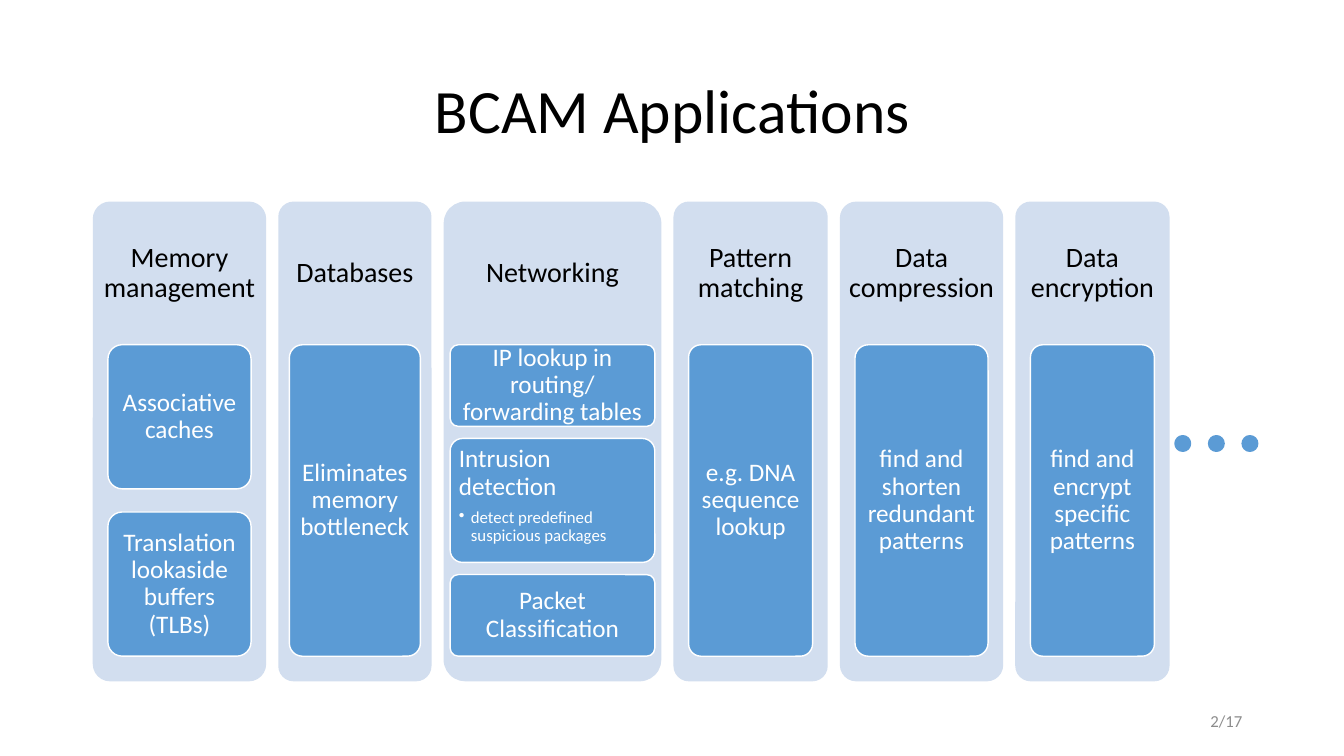
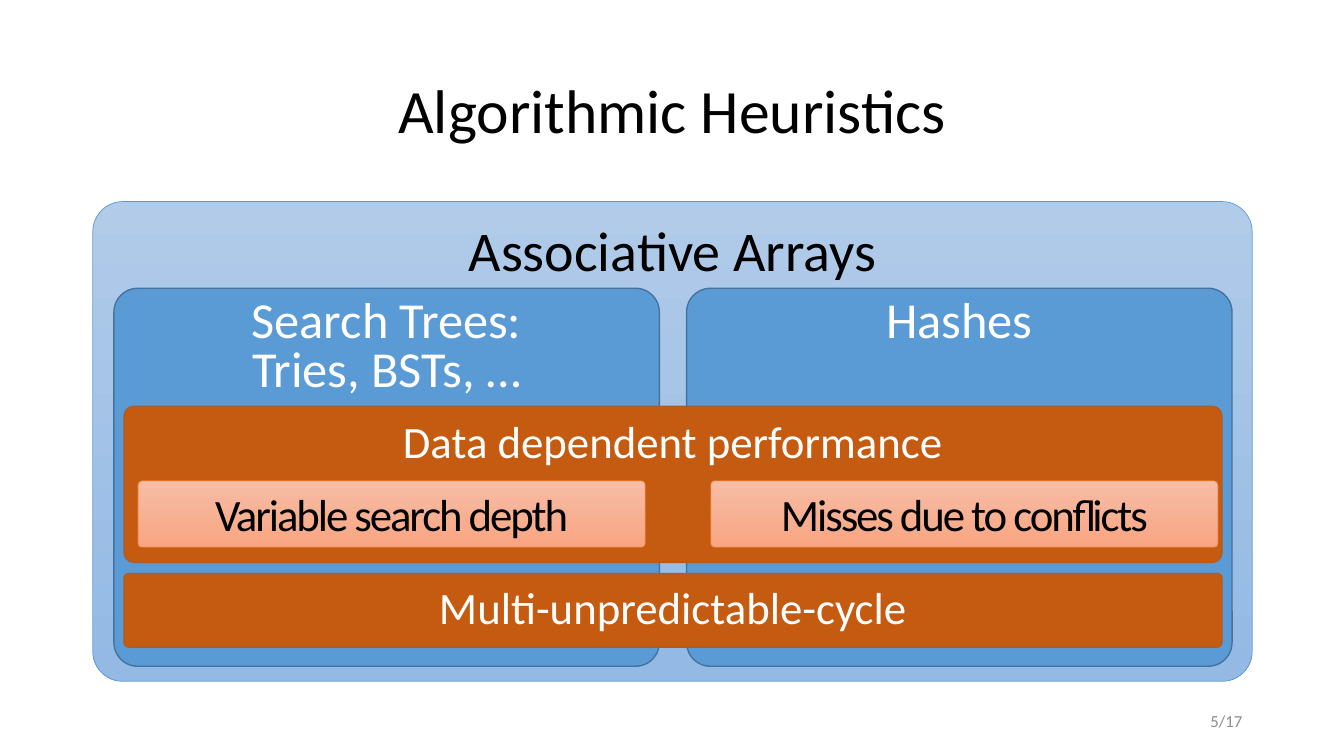
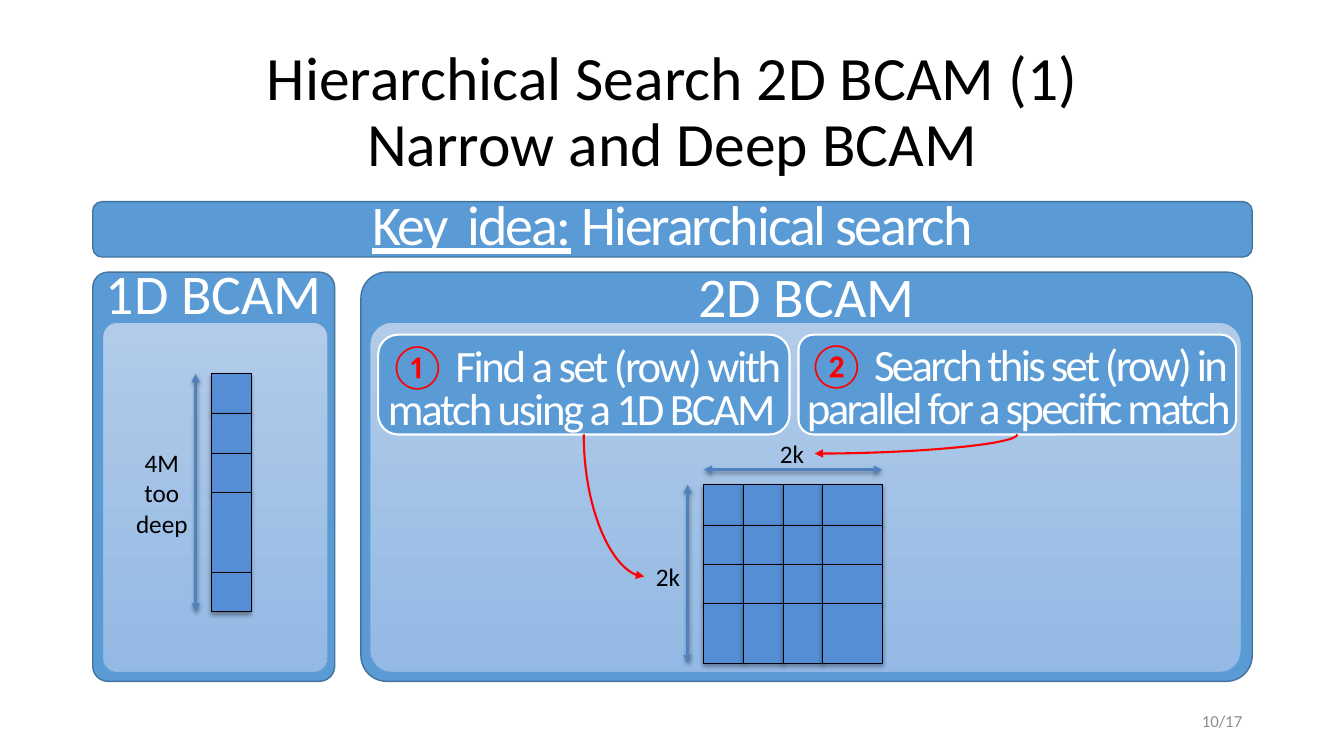
from lxml import etree
from pptx import Presentation
from pptx.dml.color import RGBColor
from pptx.enum.dml import MSO_LINE
from pptx.enum.shapes import MSO_CONNECTOR, MSO_SHAPE
from pptx.enum.text import MSO_ANCHOR, PP_ALIGN
from pptx.oxml.ns import qn
from pptx.util import Pt

ROUNDED, RECTANGLE = MSO_SHAPE.ROUNDED_RECTANGLE, MSO_SHAPE.RECTANGLE
STRAIGHT, CURVE = MSO_CONNECTOR.STRAIGHT, MSO_CONNECTOR.CURVE
LEFT, CENTER, RIGHT = PP_ALIGN.LEFT, PP_ALIGN.CENTER, PP_ALIGN.RIGHT
TOP, MIDDLE = MSO_ANCHOR.TOP, MSO_ANCHOR.MIDDLE
ROUND_DOT = MSO_LINE.ROUND_DOT

EMU_PER_PX = 9144  # 100 px to the inch
FONT = "Calibri"
BLACK, WHITE, GREY, RED = "000000", "FFFFFF", "8C8C8C", "FF0000"
BLUE, BLUE_EDGE, PALE_BLUE = "5B9BD5", "43739E", "D2DEEF"
ORANGE, ORANGE_EDGE, ORANGE_LINE = "C55A11", "AF5C24", "ED7D31"
CELL_BLUE, ARROW_BLUE = "558ED5", "4F81BD"
BLUE_FADE = ("B1CBE9", "93B9E4")
ORANGE_FADE = ("F7BDA5", "F8A582")

TITLE_BOX = (92, 40, 1150, 145)
BODY_BOX = (92, 200, 1150, 476)
NUMBER_BOX = (942, 695, 300, 40)
INSETS = (10, 5, 10, 5)
CORNER = 0.063


def px(length):
    return round(length * EMU_PER_PX)


def rgb(colour):
    return RGBColor.from_string(colour)


# Text

def format_paragraph(para, spans, size, colour, align=CENTER, spacing=1.0,
                     tracking=0, after=0, bullet=False):
    """Fill one paragraph; spans is a string or a list of run texts."""
    para.alignment = align
    para.line_spacing = spacing
    para.space_after = Pt(after)
    if bullet:
        properties = para._p.get_or_add_pPr()
        properties.set("marL", str(px(12)))
        properties.set("indent", str(px(-12)))
        etree.SubElement(properties, qn("a:buChar")).set("char", "•")
    para.font.name = FONT
    para.font.size = Pt(size)
    para.font.color.rgb = rgb(colour)
    if tracking:
        para._p.pPr.find(qn("a:defRPr")).set("spc", str(round(tracking * 100)))
    if isinstance(spans, str):
        para.text = spans
    else:
        for span in spans:
            para.add_run().text = span


def write(shape, paragraphs, size, colour, anchor=TOP, insets=INSETS, **style):
    frame = shape.text_frame
    frame.word_wrap = True
    frame.vertical_anchor = anchor
    (frame.margin_left, frame.margin_top,
     frame.margin_right, frame.margin_bottom) = map(px, insets)
    for index, spans in enumerate(paragraphs):
        para = frame.add_paragraph() if index else frame.paragraphs[0]
        format_paragraph(para, spans, size, colour, **style)
    return shape


def add_text(page, box, paragraphs, size, colour, **style):
    shape = page.shapes.add_textbox(*map(px, box))
    return write(shape, paragraphs, size, colour, **style)


# Shapes and lines

def add_box(page, box, fill, edge=None, width=1, kind=ROUNDED, corner=CORNER):
    """Add a shape; fill is one colour or a (top, bottom) pair."""
    shape = page.shapes.add_shape(kind, *map(px, box))
    shape.shadow.inherit = False
    if kind == ROUNDED:
        shape.adjustments[0] = corner
    if isinstance(fill, str):
        shape.fill.solid()
        shape.fill.fore_color.rgb = rgb(fill)
    else:
        shape.fill.gradient()
        shape.fill.gradient_angle = 270
        for stop, colour in zip(shape.fill.gradient_stops, fill):
            stop.color.rgb = rgb(colour)
    if edge:
        shape.line.color.rgb = rgb(edge)
        shape.line.width = Pt(width)
    else:
        shape.line.fill.background()
    return shape


def add_line(page, start, end, colour, width, arrows=(), kind=STRAIGHT):
    line = page.shapes.add_connector(kind, *map(px, start + end))
    line.line.color.rgb = rgb(colour)
    line.line.width = Pt(width)
    properties = line._element.spPr
    for arrow in arrows:
        etree.SubElement(properties.find(qn("a:ln")), qn(arrow)).set("type", "triangle")
    etree.SubElement(properties, qn("a:effectLst"))
    return line


def add_shadow(shape, opacity, distance):
    effects = shape._element.spPr.find(qn("a:effectLst"))
    shadow = etree.SubElement(effects, qn("a:outerShdw"), blurRad=str(Pt(3.1)),
                              dist=str(Pt(distance)), dir="5400000", rotWithShape="0")
    colour = etree.SubElement(shadow, qn("a:srgbClr"), val=BLACK)
    etree.SubElement(colour, qn("a:alpha"), val=str(opacity * 1000))


def add_page(deck, title, number):
    page = deck.slides.add_slide(deck.slide_layouts[6])
    add_text(page, TITLE_BOX, [title], 44, BLACK, anchor=MIDDLE, spacing=0.9)
    add_text(page, NUMBER_BOX, [f"{number}/17"], 12, GREY, anchor=MIDDLE, align=RIGHT)
    return page


# Applications

def add_application(page, box, heading, card_width, cards):
    """Draw a panel with a heading and evenly spread (height, texts) cards."""
    left, top, width, height = box
    add_box(page, box, PALE_BLUE, corner=0.1)
    add_text(page, (left, top, width, 143), [heading], 20, BLACK,
             anchor=MIDDLE, insets=(8, 8, 8, 8), spacing=0.9)
    stack_height = 309
    gap = (stack_height - sum(card[0] for card in cards)) / max(1, len(cards) - 1)
    card_left = left + (width - card_width) / 2
    card_top = top + 142
    for card_height, texts in cards:
        card = add_box(page, (card_left, card_top, card_width, card_height),
                       BLUE, WHITE, corner=0.1)
        detailed = len(texts) > 1
        write(card, texts[:1], 18, WHITE, anchor=TOP if detailed else MIDDLE,
              insets=(5, 4, 5, 4), align=LEFT if detailed else CENTER,
              spacing=0.9, after=6 if detailed else 0)
        for detail in texts[1:]:
            format_paragraph(card.text_frame.add_paragraph(), detail, 12, WHITE,
                             align=LEFT, spacing=0.9, bullet=True)
        card_top += card_height + gap


def build_applications(deck):
    page = add_page(deck, "BCAM Applications", 2)
    columns = [
        ("Memory management", 172, 142, [
            (143, ["Associative caches"]),
            (143, ["Translation lookaside buffers (TLBs)"])]),
        ("Databases", 152, 130, [(309, ["Eliminates memory bottleneck"])]),
        ("Networking", 216, 203, [
            (81, ["IP lookup in routing/ forwarding tables"]),
            (123, ["Intrusion detection", "detect predefined suspicious packages"]),
            (81, ["Packet Classification"])]),
        ("Pattern matching", 153, 123, [(309, ["e.g. DNA sequence lookup"])]),
        ("Data compression", 162, 132, [(309, ["find and shorten redundant patterns"])]),
        ("Data encryption", 153, 123, [(309, ["find and encrypt specific patterns"])]),
    ]
    left, top, _, height = BODY_BOX
    for heading, width, card_width, cards in columns:
        add_application(page, (left, top, width, height), heading, card_width, cards)
        left += width + 12
    # Dots that continue the row
    dots = add_line(page, (1173, 440), (1242, 440), BLUE, 12)
    dots.line.dash_style = ROUND_DOT
    dots._element.spPr.find(qn("a:ln")).set("cap", "rnd")


# Heuristics

def add_family(page, box, names, weakness):
    """Draw one family of arrays; return its weakness label to add on top."""
    left, top, width, _ = box
    write(add_box(page, box, BLUE, BLUE_EDGE), names, 36, WHITE, spacing=0.8)
    return (left + 24, top + 191, width - 38, 66), weakness


def build_heuristics(deck):
    page = add_page(deck, "Algorithmic Heuristics", 5)
    left, top, _, _ = BODY_BOX
    write(add_box(page, BODY_BOX, BLUE_FADE, BLUE, 0.5),
          ["Associative Arrays"], 40, BLACK)
    families = [(["Search Trees:", "Tries, BSTs, …"], "Variable search depth"),
                (["Hashes"], "Misses due to conflicts")]
    labels = [add_family(page, (left + 21 + 568 * index, top + 86, 541, 375), *family)
              for index, family in enumerate(families)]
    # Bands across both families
    for offset, height, text in [(203, 155, "Data dependent performance"),
                                 (369, 73, "Multi-unpredictable-cycle")]:
        band = add_box(page, (left + 31, top + offset, 1089, height), ORANGE, ORANGE_EDGE)
        write(band, [text], 32, WHITE)
    for box, weakness in labels:
        write(add_box(page, box, ORANGE_FADE, ORANGE_LINE, 0.5),
              [weakness], 32, BLACK, tracking=-1.5)


# Hierarchical search

def add_panel(page, box, heading, inner_box):
    write(add_box(page, box, BLUE, BLUE_EDGE), [heading], 40, WHITE,
          insets=(0, 0, 0, 0), spacing=0.7)
    add_box(page, inner_box, BLUE_FADE, BLUE, 0.5)


def add_memory(page, left, top, widths, heights):
    """Draw a grid of memory cells from its column widths and row heights."""
    for row, height in enumerate(heights):
        for column, width in enumerate(widths):
            box = (left + sum(widths[:column]), top + sum(heights[:row]), width, height)
            cell = add_box(page, box, CELL_BLUE, BLACK, 0.75, kind=RECTANGLE)
            add_shadow(cell, 35, 1.8)


def add_dimension(page, start, end, label_box, lines):
    arrow = add_line(page, start, end, ARROW_BLUE, 2, ("a:headEnd", "a:tailEnd"))
    add_shadow(arrow, 38, 1.6)
    return add_text(page, label_box, lines, 18, BLACK, insets=(0, 5, 0, 5))


def add_step(page, box, corner, number, text, tracking, label, label_side):
    """Draw a step and a curved arrow that leads from it to a label."""
    step = add_box(page, box, BLUE, WHITE, 1.5, corner=corner)
    write(step, [[number + " ", text]], 32, WHITE, insets=(4, 8, 0, 0),
          align=LEFT, spacing=0.8, tracking=tracking)
    step.text_frame.paragraphs[0].runs[0].font.color.rgb = rgb(RED)
    curve = add_line(page, (0, 0), (0, 0), RED, 1.5, ("a:headEnd",), kind=CURVE)
    curve._element.spPr.find(qn("a:prstGeom")).set("prst", "curvedConnector2")
    curve.begin_connect(label, label_side)
    curve.end_connect(step, 2)


def build_hierarchical_search(deck):
    page = add_page(deck, "Hierarchical Search 2D BCAM (1)\vNarrow and Deep BCAM", 10)
    left, top, width, _ = BODY_BOX
    idea = add_box(page, (left, top, width, 55), BLUE, BLUE_EDGE, corner=0.167)
    write(idea, [["Key  idea:", " Hierarchical search"]], 40, WHITE,
          anchor=MIDDLE, spacing=0.8, tracking=-1.5)
    idea.text_frame.paragraphs[0].runs[0].font.underline = True

    add_panel(page, (left, 270, 240, 406), "1D BCAM", (102, 320, 223, 347))
    add_panel(page, (358, 270, 884, 406), "2D BCAM", (367, 320, 864, 347))

    # Deep memory
    add_memory(page, 210, 371, [39], [39, 40, 39, 79, 39])
    add_dimension(page, (194, 371), (194, 607), (123, 439, 75, 101),
                  ["4M", "too", "deep"])

    # Square memory
    add_memory(page, 698, 481, [39, 40, 39, 59], [40, 39, 39, 59])
    columns_label = add_dimension(page, (698, 466), (875, 466), (763, 430, 45, 40), ["2k"])
    rows_label = add_dimension(page, (682, 481), (682, 658), (639, 552, 47, 40), ["2k"])

    # Steps
    add_step(page, (375, 332, 408, 99), 0.2, "①",
             "Find a set (row) with match using a 1D BCAM", -1.7, rows_label, 1)
    add_step(page, (792, 332, 434, 99), 0.15, "②",
             "Search this set (row) in parallel for a specific match", -1.9,
             columns_label, 3)


def main():
    deck = Presentation()
    deck.slide_width, deck.slide_height = px(1333), px(750)
    build_applications(deck)
    build_heuristics(deck)
    build_hierarchical_search(deck)
    deck.save("out.pptx")


if __name__ == "__main__":
    main()
